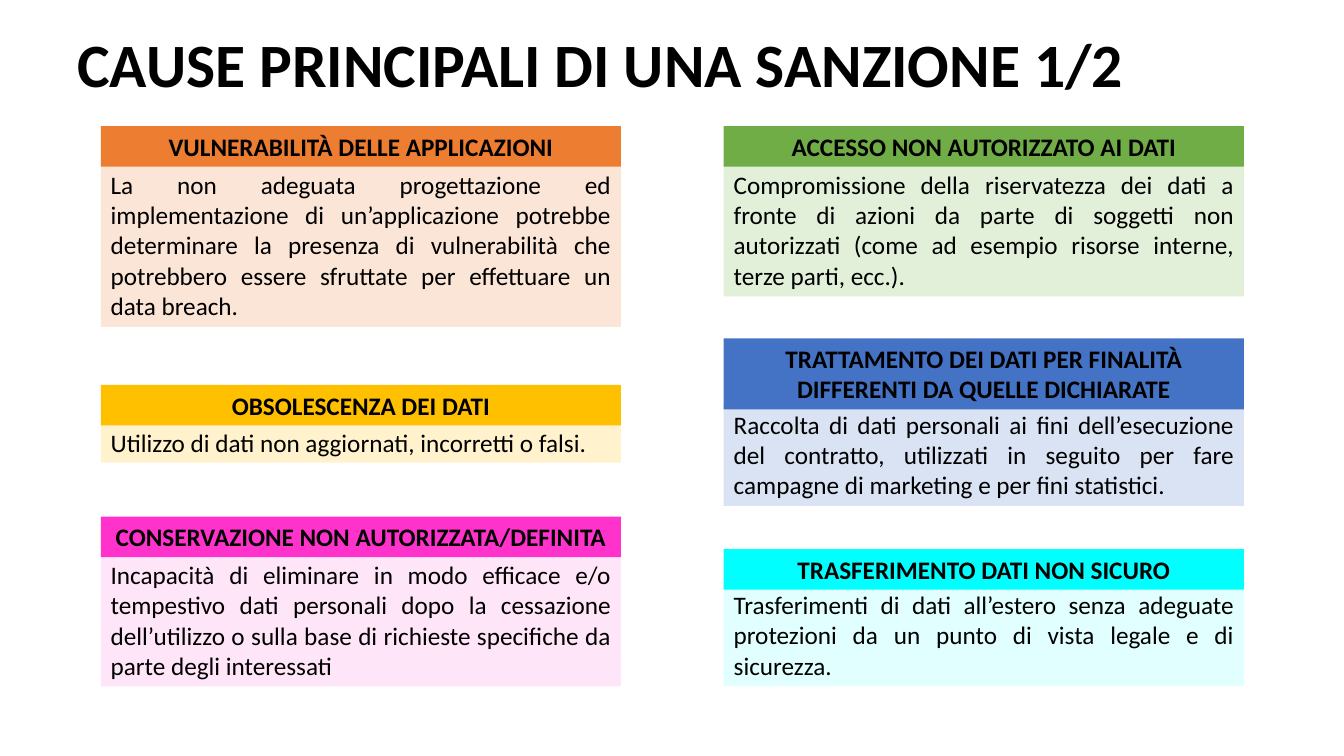
from pptx import Presentation
from pptx.dml.color import RGBColor
from pptx.enum.shapes import MSO_SHAPE as Shape
from pptx.enum.text import MSO_ANCHOR as Anchor, MSO_AUTO_SIZE as AutoSize, PP_ALIGN as Align
from pptx.util import Cm, Pt

LEFT_COLUMN, RIGHT_COLUMN = 2.54, 18.24
CARD_WIDTH = 13.11
PADDING, LINE_HEIGHT = 0.25, 0.77

TITLE = "CAUSE PRINCIPALI DI UNA SANZIONE 1/2"

# left, heading top, heading lines, heading colour, heading,
# body top, body lines, body colour, body
CARDS = [
    (LEFT_COLUMN, 3.18, 1, "ED7D31", "VULNERABILITÀ DELLE APPLICAZIONI",
     4.14, 5, "FBE5D6",
     "La non adeguata progettazione ed implementazione di un’applicazione "
     "potrebbe determinare la presenza di vulnerabilità che potrebbero essere "
     "sfruttate per effettuare un data breach."),
    (RIGHT_COLUMN, 3.18, 1, "70AD47", "ACCESSO NON AUTORIZZATO AI DATI",
     4.14, 4, "E2F0D9",
     "Compromissione della riservatezza dei dati a fronte di azioni da parte di "
     "soggetti non autorizzati (come ad esempio risorse interne, terze parti, ecc.)."),
    (LEFT_COLUMN, 9.7, 1, "FFC000", "OBSOLESCENZA DEI DATI",
     10.64, 1, "FFF2CC",
     "Utilizzo di dati non aggiornati, incorretti o falsi."),
    (LEFT_COLUMN, 13.02, 1, "FF33CC", "CONSERVAZIONE NON AUTORIZZATA/DEFINITA",
     13.97, 4, "FFE5F8",
     "Incapacità di eliminare in modo efficace e/o tempestivo dati personali dopo "
     "la cessazione dell’utilizzo o sulla base di richieste specifiche da parte "
     "degli interessati"),
    (RIGHT_COLUMN, 8.53, 2, "4472C4",
     "TRATTAMENTO DEI DATI PER FINALITÀ DIFFERENTI DA QUELLE DICHIARATE",
     10.19, 3, "DAE3F3",
     "Raccolta di dati personali ai fini dell’esecuzione del contratto, utilizzati "
     "in seguito per fare campagne di marketing e per fini statistici."),
    (RIGHT_COLUMN, 13.84, 1, "00FFFF", "TRASFERIMENTO DATI NON SICURO",
     14.73, 3, "E1FFFF",
     "Trasferimenti di dati all’estero senza adeguate protezioni da un punto di "
     "vista legale e di sicurezza."),
]


def colour(value):
    return RGBColor.from_string(value)


def write_text(shape, text, align, size, bold, **frame_format):
    frame = shape.text_frame
    for name, value in {"word_wrap": True, **frame_format}.items():
        setattr(frame, name, value)
    paragraph = frame.paragraphs[0]
    paragraph.alignment = align
    run = paragraph.add_run()
    run.text = text
    for name, value in {"name": "Calibri", "size": Pt(size), "bold": bold}.items():
        setattr(run.font, name, value)
    run.font.color.rgb = colour("000000")


def add_title(slide, text):
    box = slide.shapes.add_textbox(Cm(1.7), Cm(0), Cm(30.07), Cm(3.18))
    write_text(box, text, Align.LEFT, 44, True, vertical_anchor=Anchor.MIDDLE)


def add_panel(slide, left, top, lines, fill, text, align, bold):
    """Add a filled rectangle as tall as its number of text lines."""
    height = PADDING + LINE_HEIGHT * lines
    panel = slide.shapes.add_shape(
        Shape.RECTANGLE, Cm(left), Cm(top), Cm(CARD_WIDTH), Cm(height))
    panel.shadow.inherit = False
    panel.fill.solid()
    panel.fill.fore_color.rgb = colour(fill)
    panel.line.fill.background()
    write_text(panel, text, align, 18, bold, vertical_anchor=Anchor.TOP,
               auto_size=AutoSize.SHAPE_TO_FIT_TEXT)


def add_card(slide, left, heading_top, heading_lines, heading_fill, heading,
             body_top, body_lines, body_fill, body):
    add_panel(slide, left, body_top, body_lines, body_fill, body, Align.JUSTIFY, False)
    add_panel(slide, left, heading_top, heading_lines, heading_fill, heading,
              Align.CENTER, True)


def main():
    presentation = Presentation()
    presentation.slide_width, presentation.slide_height = Cm(33.87), Cm(19.05)
    slide = presentation.slides.add_slide(presentation.slide_layouts[6])
    add_title(slide, TITLE)
    for card in CARDS:
        add_card(slide, *card)
    presentation.save("out.pptx")


if __name__ == "__main__":
    main()
